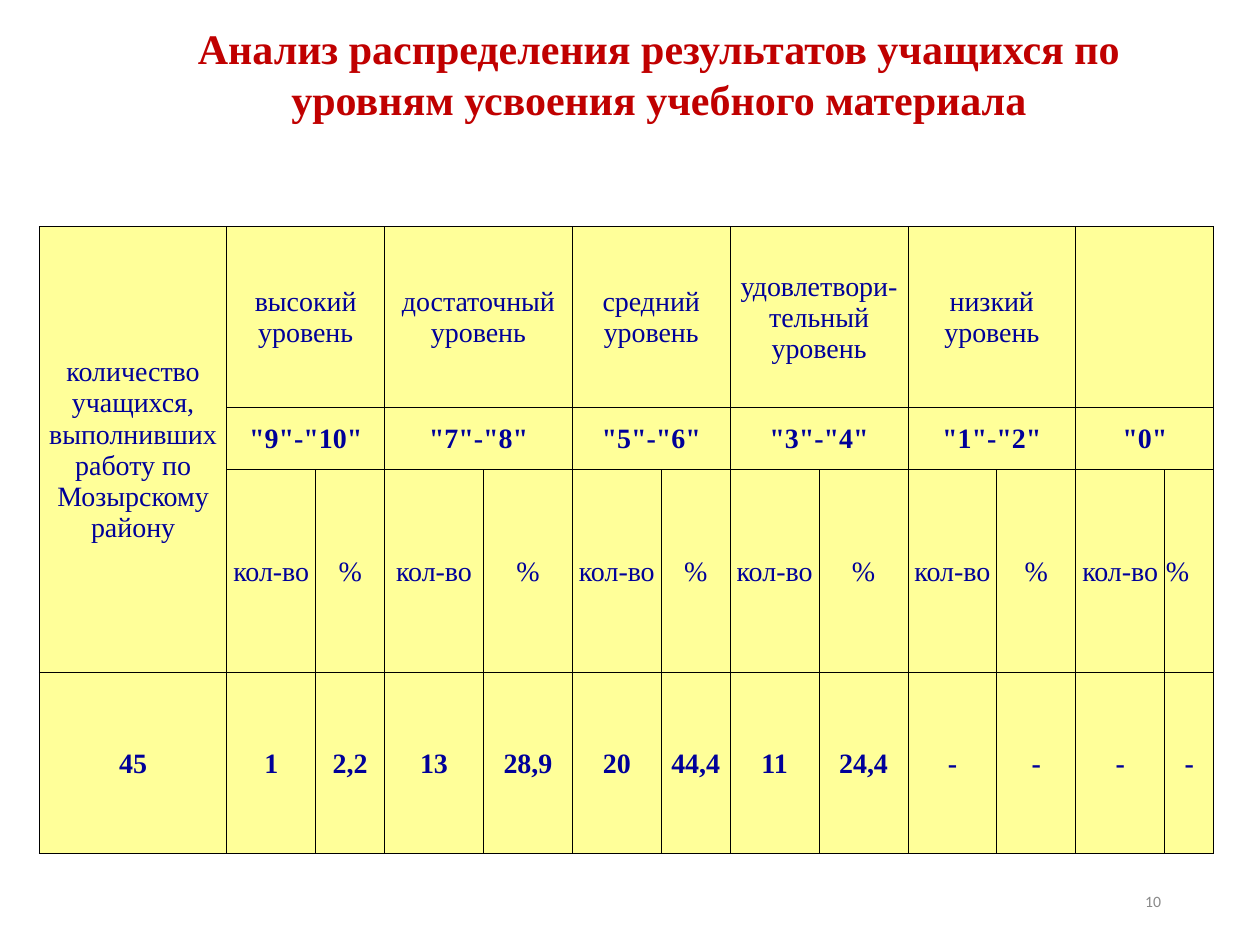
from lxml import etree
from pptx import Presentation
from pptx.dml.color import RGBColor
from pptx.enum.text import MSO_ANCHOR, MSO_AUTO_SIZE, PP_ALIGN
from pptx.oxml.ns import qn
from pptx.util import Pt

LEFT, CENTER, RIGHT = PP_ALIGN.LEFT, PP_ALIGN.CENTER, PP_ALIGN.RIGHT
TOP, MIDDLE = MSO_ANCHOR.TOP, MSO_ANCHOR.MIDDLE
NO_AUTOFIT = MSO_AUTO_SIZE.NONE

COLORS = {"title": "C00000", "text": "000099", "cell": "FFFF99",
          "border": "000000", "number": "898989"}
SERIF, SANS = "Times New Roman", "Calibri"

TITLE = "Анализ распределения результатов учащихся по уровням усвоения учебного материала"
PAGE_NUMBER = "10"
PUPILS_LABEL = "количество учащихся, выполнивших работу по Мозырскому району"
PUPILS_TOTAL = "45"
LEVELS = [
    ("высокий уровень", '"9"-"10"', "1", "2,2"),
    ("достаточный уровень", '"7"-"8"', "13", "28,9"),
    ("средний уровень", '"5"-"6"', "20", "44,4"),
    ("удовлетвори-тельный уровень", '"3"-"4"', "11", "24,4"),
    ("низкий уровень", '"1"-"2"', "-", "-"),
    ("", '"0"', "-", "-"),
]
COLUMN_WIDTHS = [107.1, 50.8, 39.4, 56.5, 50.8, 50.8, 39.4, 50.8, 50.8, 50.8, 45.1, 50.8, 28.1]
ROW_HEIGHTS = [103.5, 35.5, 72.7, 103.5]


def write(frame, text, font, size, color, align, bold=False):
    frame.text = text
    paragraph = frame.paragraphs[0]
    paragraph.alignment = align
    for span in paragraph.runs:
        span.font.name = font
        span.font.size = Pt(size)
        span.font.bold = bold
        span.font.color.rgb = RGBColor.from_string(COLORS[color])


def style_cell(cell):
    cell.margin_left = cell.margin_right = cell.margin_top = Pt(0.7)
    cell.margin_bottom = Pt(0)
    cell.vertical_anchor = MIDDLE
    properties = cell._tc.get_or_add_tcPr()
    for side in ("a:lnL", "a:lnR", "a:lnT", "a:lnB"):
        line = etree.SubElement(properties, qn(side), w=str(Pt(0.5)))
        fill = etree.SubElement(line, qn("a:solidFill"))
        etree.SubElement(fill, qn("a:srgbClr"), val=COLORS["border"])
    cell.fill.solid()
    cell.fill.fore_color.rgb = RGBColor.from_string(COLORS["cell"])


def write_cell(cell, text, bold=False, align=CENTER):
    write(cell.text_frame, text, SERIF, 16, "text", align, bold)


def add_title(page):
    title = page.shapes.title
    title.left, title.top, title.width, title.height = Pt(70.5), Pt(9.5), Pt(612), Pt(65.5)
    frame = title.text_frame
    write(frame, TITLE, SERIF, 24, "title", CENTER, True)
    frame.word_wrap = True
    frame.auto_size = NO_AUTOFIT
    frame.vertical_anchor = TOP


def add_page_number(page):
    box = page.shapes.add_textbox(Pt(508.5), Pt(500.5), Pt(162), Pt(28.75))
    box.text_frame.word_wrap = True
    box.text_frame.vertical_anchor = MIDDLE
    write(box.text_frame, PAGE_NUMBER, SANS, 9, "number", RIGHT)


def add_levels_table(page):
    table = page.shapes.add_table(
        len(ROW_HEIGHTS), len(COLUMN_WIDTHS),
        Pt(22.5), Pt(129.5), Pt(sum(COLUMN_WIDTHS)), Pt(sum(ROW_HEIGHTS))).table
    table.first_row = table.horz_banding = False
    for column, width in zip(table.columns, COLUMN_WIDTHS):
        column.width = Pt(width)
    for row, height in zip(table.rows, ROW_HEIGHTS):
        row.height = Pt(height)
    for cell in table.iter_cells():
        style_cell(cell)

    table.cell(0, 0).merge(table.cell(2, 0))
    write_cell(table.cell(0, 0), PUPILS_LABEL)
    write_cell(table.cell(3, 0), PUPILS_TOTAL, True)
    for index, (level, marks, count, percent) in enumerate(LEVELS):
        first = 1 + 2 * index
        second = first + 1
        for row, text in enumerate((level, marks)):
            table.cell(row, first).merge(table.cell(row, second))
            write_cell(table.cell(row, first), text, row == 1)
        last = index == len(LEVELS) - 1
        write_cell(table.cell(2, first), "кол-во")
        write_cell(table.cell(2, second), "%", align=LEFT if last else CENTER)
        write_cell(table.cell(3, first), count, True)
        write_cell(table.cell(3, second), percent, True)


def main():
    deck = Presentation()
    deck.slide_width, deck.slide_height = Pt(720), Pt(540)
    page = deck.slides.add_slide(deck.slide_layouts[5])
    add_page_number(page)
    add_title(page)
    add_levels_table(page)
    deck.save("out.pptx")


if __name__ == "__main__":
    main()
